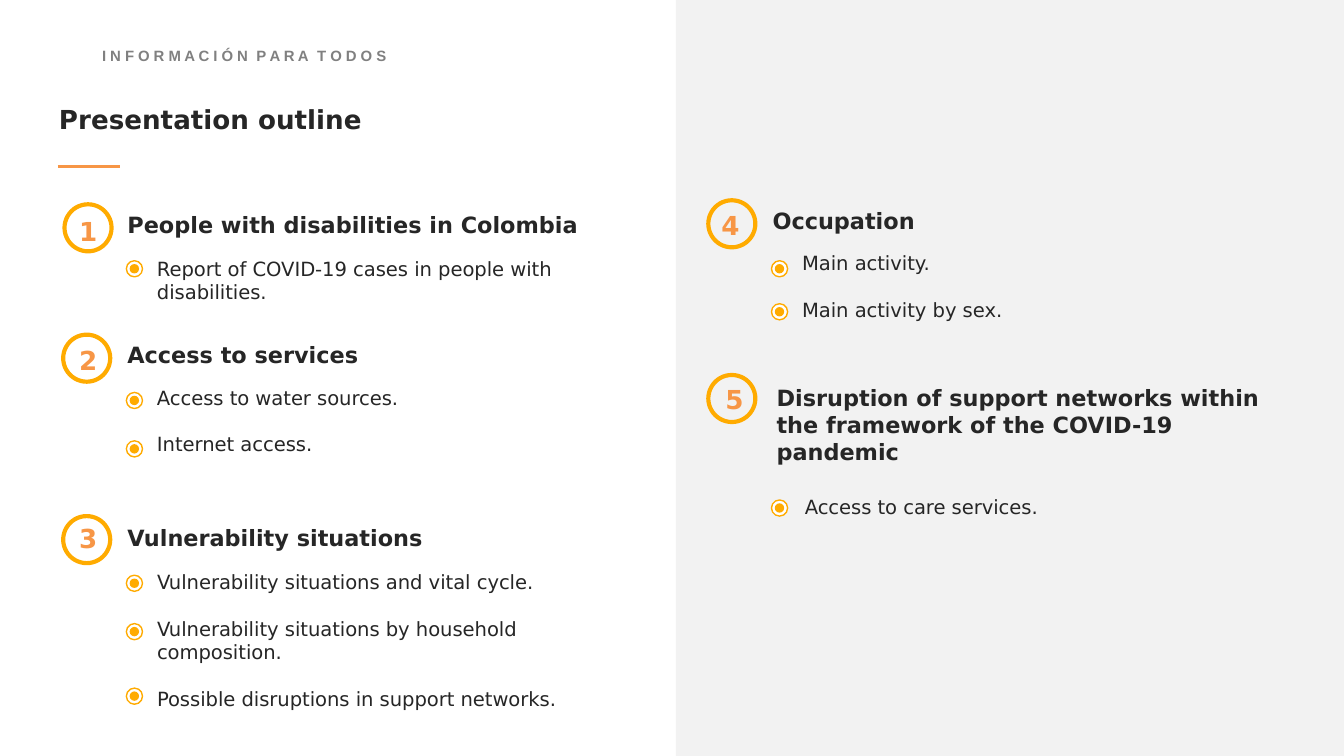
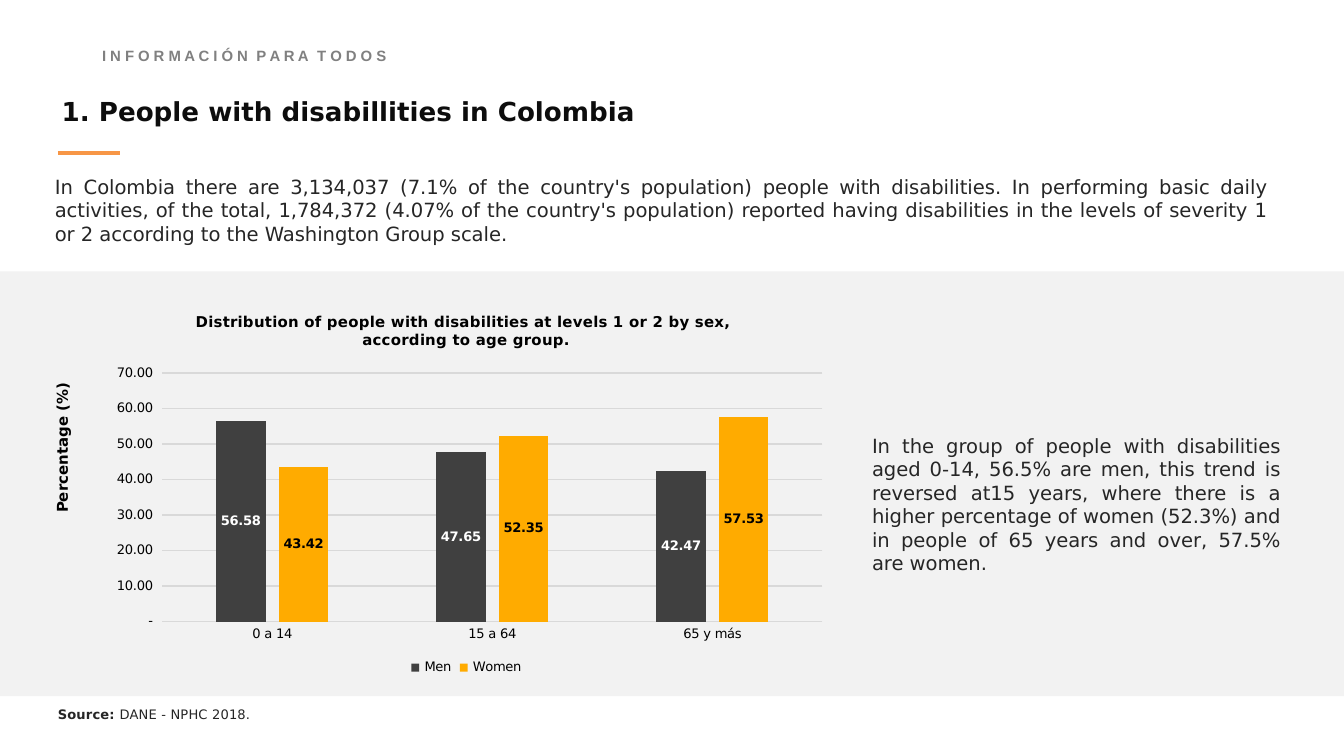
from dataclasses import dataclass
from typing import Any

import lxml.etree
import pptx
import pptx.chart.data
import pptx.dml.color
import pptx.enum.chart
import pptx.enum.shapes
import pptx.enum.text
import pptx.oxml.ns
import pptx.util

Inches = pptx.util.Inches
Pt = pptx.util.Pt
qn = pptx.oxml.ns.qn
Kind = pptx.enum.shapes.MSO_SHAPE
Align = pptx.enum.text.PP_ALIGN

WIDE = 10
HIGH = WIDE * 9 / 16
FONT = "DejaVu Sans"
INK = "262626"
BLACK = "000000"
WHITE = "FFFFFF"
GREY = "808080"
BAND = "F2F2F2"
GRID = "D9D9D9"
GOLD = "FFAB00"
CORAL = "F79646"
DARK = "404040"
FORMAT = '_-* #,##0.00_-;\\-* #,##0.00_-;_-* "-"_-;'


@dataclass
class Box:
    left: float
    top: float
    width: float
    height: float

    def sizes(self) -> list[int]:
        return [Inches(n) for n in (self.left, self.top, self.width, self.height)]


@dataclass
class Style:
    size: float
    color: str = INK
    bold: bool = False
    face: str = FONT


@dataclass
class Part:
    mark: str
    ring: Box
    digit: Box
    head: str
    place: Box
    items: list[str]
    list_box: Box
    dots: list[float]


@dataclass
class Group:
    name: str
    values: list[float]
    fill: str
    label: str


TITLE = Style(14, bold=True)
HEAD = Style(12, bold=True)
BODY = Style(10.5)
DIGIT = Style(14, CORAL, True)
RING = 0.35
DOT = 0.12
CORE = 0.07

PARTS = [
    Part("1", Box(0.48, 1.52, RING, RING), Box(0.49, 1.55, 0.35, 0.34),
         "People with disabilities in Colombia", Box(0.85, 1.52, 3.84, 0.3),
         ["Report of COVID-19 cases in people with disabilities."],
         Box(1.07, 1.86, 3.73, 0.45), [1.94]),
    Part("2", Box(0.47, 2.49, RING, RING), Box(0.49, 2.51, 0.34, 0.34),
         "Access to services", Box(0.85, 2.49, 3.84, 0.3),
         ["Access to water sources.", "Internet access."],
         Box(1.07, 2.82, 2.63, 0.63), [2.92, 3.28]),
    Part("3", Box(0.47, 3.84, RING, RING), Box(0.49, 3.84, 0.34, 0.34),
         "Vulnerability situations", Box(0.85, 3.85, 3.84, 0.3),
         ["Vulnerability situations and vital cycle.",
          "Vulnerability situations by household composition.",
          "Possible disruptions in support networks."],
         Box(1.07, 4.19, 3.62, 1.16), [4.28, 4.64, 5.12]),
    Part("4", Box(5.27, 1.49, RING, RING), Box(5.27, 1.51, 0.34, 0.34),
         "Occupation", Box(5.65, 1.49, 3.84, 0.3),
         ["Main activity.", "Main activity by sex."],
         Box(5.87, 1.82, 1.93, 0.63), [1.94, 2.26]),
    Part("5", Box(5.27, 2.79, RING, RING), Box(5.3, 2.8, 0.34, 0.34),
         "Disruption of support networks within the framework of the COVID-19 pandemic",
         Box(5.68, 2.81, 4.07, 0.71),
         ["Access to care services."],
         Box(5.89, 3.63, 3.73, 0.28), [3.72]),
]

AGES = ["0 a 14", "15 a 64", "65 y más"]
GROUPS = [
    Group("Men", [56.58, 47.65, 42.47], DARK, WHITE),
    Group("Women", [43.42, 52.35, 57.53], GOLD, BLACK),
]


def color(code: str) -> Any:
    return pptx.dml.color.RGBColor.from_string(code)


def paint(fill: Any, code: str) -> None:
    fill.solid()
    fill.fore_color.rgb = color(code)


def dress(font: Any, style: Style) -> None:
    font.name = style.face
    font.size = Pt(style.size)
    font.bold = style.bold
    font.color.rgb = color(style.color)


def write(slide: Any, box: Box, lines: list[str], style: Style,
          align: Any = None, gap: float = 0) -> Any:
    shape = slide.shapes.add_textbox(*box.sizes())
    frame = shape.text_frame
    frame.word_wrap = True
    frame.auto_size = pptx.enum.text.MSO_AUTO_SIZE.SHAPE_TO_FIT_TEXT
    frame.text = "\n".join(lines)
    for i, para in enumerate(frame.paragraphs):
        para.alignment = align
        if i:
            para.space_before = Pt(gap)
        for run in para.runs:
            dress(run.font, style)
    return shape


def write_runs(slide: Any, box: Box, runs: list[tuple[str, Style, int]],
               space: float, align: Any = None) -> Any:
    shape = write(slide, box, [""], BODY, align)
    frame = shape.text_frame
    frame.margin_left = frame.margin_right = frame.margin_bottom = 0
    frame.margin_top = Inches(0.01)
    para = frame.paragraphs[0]
    para.line_spacing = space
    for text, style, track in runs:
        run = para.add_run()
        run.text = text
        dress(run.font, style)
        run.font._element.set("spc", str(track))
    return para


def draw(shapes: Any, kind: Any, box: Box, fill: str = "",
         edge: str = "", weight: float = 0) -> None:
    shape = shapes.add_shape(kind, *box.sizes())
    shape.shadow.inherit = False
    if fill:
        paint(shape.fill, fill)
    else:
        shape.fill.background()
    if edge:
        paint(shape.line.fill, edge)
        shape.line.width = Pt(weight)
    else:
        shape.line.fill.background()


def start(deck: Any, band: Box) -> Any:
    slide = deck.slides.add_slide(deck.slide_layouts[6])
    style = Style(8, GREY, True, "Arial")
    runs = [("I N F O R M A C I Ó N", style, -5), (" ", style, 220),
            ("P A R A", style, -5), (" ", style, 220), ("T O D O S", style, -5)]
    para = write_runs(slide, Box(0.74, 0.3, 3.07, 0.19), runs, 1.3, Align.JUSTIFY)
    props = para._p.get_or_add_pPr()
    props.set("marL", str(Inches(0.03)))
    props.set("indent", str(Inches(-0.01)))
    draw(slide.shapes, Kind.RECTANGLE, band, BAND)
    return slide


def add_title(slide: Any, text: str, box: Box, style: Style, rule: float) -> None:
    write(slide, box, [text], style)
    line = slide.shapes.add_connector(
        pptx.enum.shapes.MSO_CONNECTOR.STRAIGHT,
        Inches(0.43), Inches(rule), Inches(0.89), Inches(rule))
    line.line.color.rgb = color(CORAL)
    line.line.width = Pt(2)
    lxml.etree.SubElement(line._element.spPr, qn("a:effectLst"))


def add_dot(slide: Any, left: float, top: float) -> None:
    shapes = slide.shapes.add_group_shape().shapes
    pad = (DOT - CORE) / 2
    draw(shapes, Kind.OVAL, Box(left, top, DOT, DOT), WHITE, GOLD, 0.75)
    draw(shapes, Kind.OVAL, Box(left + pad, top + pad, CORE, CORE), GOLD)


def add_part(slide: Any, part: Part) -> None:
    write(slide, part.digit, [part.mark], DIGIT)
    draw(slide.shapes, Kind.OVAL, part.ring, edge=GOLD, weight=2.25)
    write(slide, part.place, [part.head], HEAD)
    write(slide, part.list_box, part.items, BODY, gap=12.5)
    left = 0.94 if part.ring.left < 5 else 5.74
    for top in part.dots:
        add_dot(slide, left, top)


def place_plot(chart: Any, box: Box) -> None:
    area = chart._chartSpace.chart.plotArea
    for old in area.findall(qn("c:layout")):
        area.remove(old)
    layout = lxml.etree.Element(qn("c:layout"))
    area.insert(0, layout)
    manual = lxml.etree.SubElement(layout, qn("c:manualLayout"))
    pairs = [("layoutTarget", "inner"), ("xMode", "edge"), ("yMode", "edge"),
             ("x", box.left), ("y", box.top), ("w", box.width), ("h", box.height)]
    for tag, value in pairs:
        lxml.etree.SubElement(manual, qn("c:" + tag)).set("val", str(value))


def add_bars(slide: Any) -> None:
    enum = pptx.enum.chart
    data = pptx.chart.data.CategoryChartData(number_format=FORMAT)
    data.categories = AGES
    for group in GROUPS:
        data.add_series(group.name, group.values)
    chart = slide.shapes.add_chart(
        enum.XL_CHART_TYPE.COLUMN_CLUSTERED,
        *Box(0.71, 2.17, 5.52, 2.89).sizes(), data).chart
    dress(chart.font, Style(7, BLACK))
    chart.has_title = True
    frame = chart.chart_title.text_frame
    frame.text = ("Distribution of people with disabilities at levels 1 or 2 by sex, \n"
                  "according to age group.")
    for para in frame.paragraphs:
        dress(para.runs[0].font, Style(8, BLACK, True))
    chart.has_legend = True
    chart.legend.position = enum.XL_LEGEND_POSITION.BOTTOM
    chart.legend.include_in_layout = False
    for axis in (chart.category_axis, chart.value_axis):
        axis.major_tick_mark = axis.minor_tick_mark = enum.XL_TICK_MARK.NONE
    cats, vals = chart.category_axis, chart.value_axis
    vals.minimum_scale, vals.maximum_scale, vals.major_unit = 0, 70, 10
    vals.tick_labels.number_format = FORMAT
    vals.tick_labels.number_format_is_linked = False
    vals.format.line.fill.background()
    for line in (cats.format.line, vals.major_gridlines.format.line):
        line.color.rgb = color(GRID)
        line.width = Pt(0.75)
    plot = chart.plots[0]
    plot.vary_by_categories = False
    plot.gap_width = 219
    plot.overlap = -27
    for bars, group in zip(plot.series, GROUPS):
        paint(bars.format.fill, group.fill)
        bars.invert_if_negative = False
        labels = bars.data_labels
        labels.show_value = True
        labels.position = enum.XL_LABEL_POSITION.CENTER
        labels.number_format = FORMAT
        labels.number_format_is_linked = False
        dress(labels.font, Style(7, group.label, True))
    place_plot(chart, Box(0.09, 0.21, 0.89, 0.64))


def add_outline(deck: Any) -> None:
    slide = start(deck, Box(5.03, 0, 4.97, HIGH))
    add_title(slide, "Presentation outline", Box(0.34, 0.72, 7.52, 0.34), TITLE, 1.24)
    for part in PARTS:
        add_part(slide, part)


def add_people(deck: Any) -> None:
    slide = start(deck, Box(0, 2.02, WIDE, 3.16))
    add_bars(slide)
    write(slide, Box(0.31, 1.25, 9.23, 0.63), [
        "In Colombia there are 3,134,037 (7.1% of the country's population) people with "
        "disabilities. In performing basic daily activities, of the total, 1,784,372 "
        "(4.07% of the country's population) reported having disabilities in the levels "
        "of severity 1 or 2 according to the Washington Group scale."], BODY, Align.JUSTIFY)
    add_title(slide, "1. People with disabillities in Colombia",
              Box(0.36, 0.66, 7.52, 0.34), Style(14, "0D0D0D", True), 1.14)
    write_runs(slide, Box(0.43, 5.24, 6.81, 0.13),
               [("Source: ", Style(7, bold=True), 10),
                ("DANE - NPHC 2018.", Style(7), 10)], 1.04)
    write(slide, Box(6.39, 3.18, 3.24, 1.16), [
        "In the group of people with disabilities aged 0-14, 56.5% are men, this trend is "
        "reversed at15 years, where there is a higher percentage of women (52.3%) and in "
        "people of 65 years and over, 57.5% are women."], BODY, Align.JUSTIFY)
    name = write(slide, Box(-0.16, 3.17, 1.25, 0.24), ["Percentage (%)"],
                 Style(8, BLACK, True))
    name.rotation = 270


def main() -> None:
    deck = pptx.Presentation()
    deck.slide_width = Inches(WIDE)
    deck.slide_height = Inches(HIGH)
    add_outline(deck)
    add_people(deck)
    deck.save("out.pptx")


if __name__ == "__main__":
    main()
